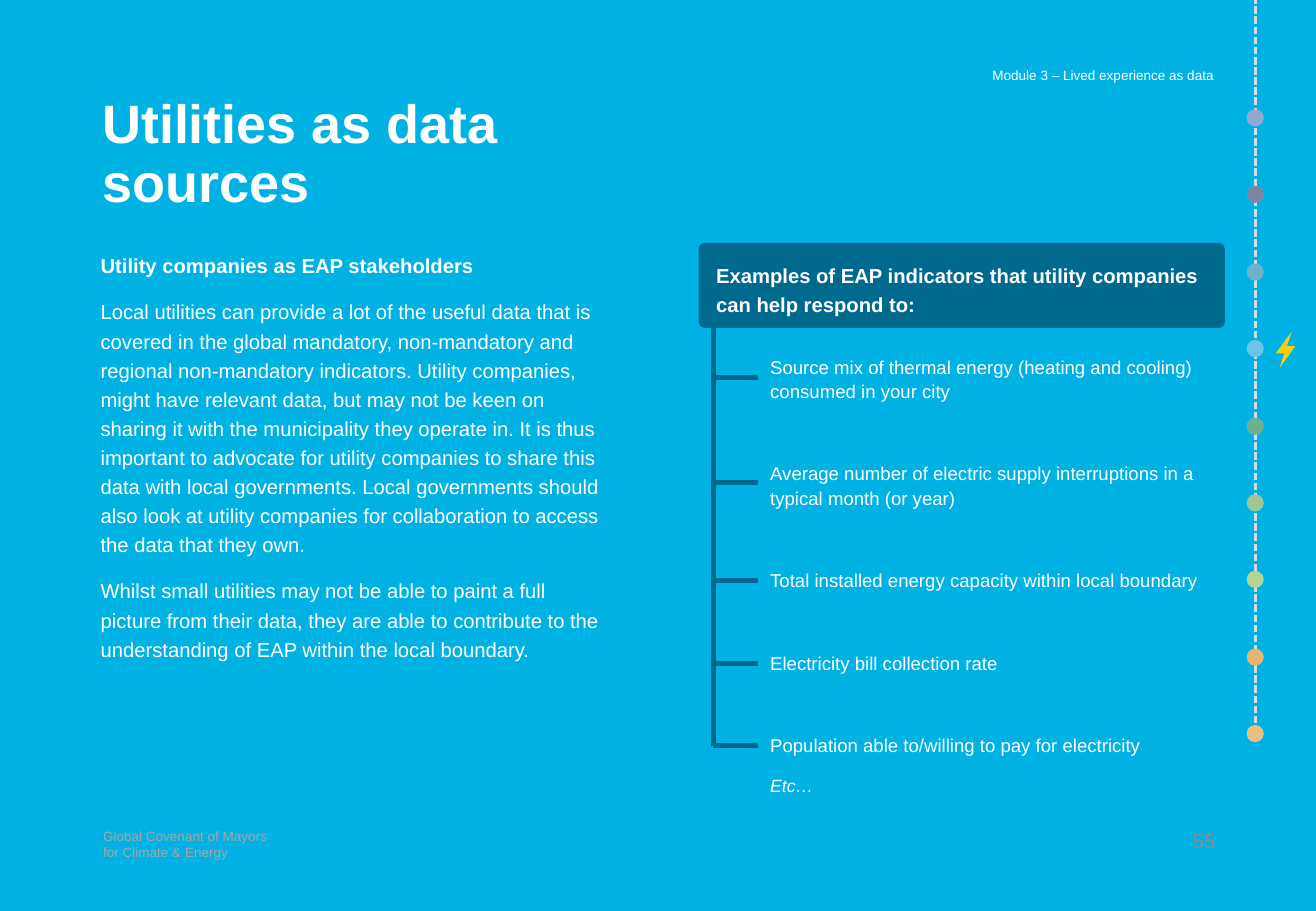
import pptx
import pptx.dml.color
import pptx.enum.dml
import pptx.enum.shapes
import pptx.enum.text
import pptx.oxml.ns
import pptx.util
from lxml import etree

SCALE = 9144  # EMU in one px, 100 px to the inch
SHAPE = pptx.enum.shapes.MSO_SHAPE
ALIGN = pptx.enum.text.PP_ALIGN
ANCHOR = pptx.enum.text.MSO_ANCHOR

SKY, NAVY, WHITE = "00B2E3", "00698E", "FFFFFF"
PALE, GREY, DIM, GOLD = "D9D9D9", "A6A6A6", "8C8C8C", "FAD307"

INTRO = [
    "Local utilities can provide a lot of the useful data that is covered in the global "
    "mandatory, non-mandatory and regional non-mandatory indicators. Utility companies, "
    "might have relevant data, but may not be keen on sharing it with the municipality "
    "they operate in. It is thus important to advocate for utility companies to share "
    "this data with local governments. Local governments should also look at utility "
    "companies for collaboration to access the data that they own.",
    "Whilst small utilities may not be able to paint a full picture from their data, "
    "they are able to contribute to the understanding of EAP within the local boundary.",
]
# Indicator text and the height of its branch
INDICATORS = [
    ("Source mix of thermal energy (heating and cooling) consumed in your city", 311),
    ("Average number of electric supply interruptions in a typical month (or year)", 397),
    ("Total installed energy capacity within local boundary", 478),
    ("Electricity bill collection rate", 546),
    ("Population able to/willing to pay for electricity", 614),
]
STOPS = ["4C78CE", "1C3567", "008CBE", "00B0F0", "038842",
         "6AB24D", "92D050", "F19500", "F8A92A"]


def px(n):
    return pptx.util.Emu(round(n * SCALE))


def rgb(code):
    return pptx.dml.color.RGBColor.from_string(code)


def sub(node, tag, **attrs):
    return etree.SubElement(node, pptx.oxml.ns.qn(tag), **attrs)


def para(text, size=12, color=WHITE, bold=False, slant=False, gap=10):
    """Describe one paragraph; gap is the space before it in points."""
    return dict(text=text, size=size, color=color, bold=bold, slant=slant, gap=gap)


class Page:
    def __init__(self, deck, font, back):
        self.font = font
        self.slide = deck.slides.add_slide(deck.slide_layouts[5])
        self.shapes = self.slide.shapes
        fill = self.slide.background.fill
        fill.solid()
        fill.fore_color.rgb = rgb(back)

    def fill_text(self, frame, paras, lead=1.0, align=ALIGN.LEFT, anchor=ANCHOR.TOP):
        frame.word_wrap = True
        frame.auto_size = pptx.enum.text.MSO_AUTO_SIZE.NONE
        frame.vertical_anchor = anchor
        for i, item in enumerate(paras):
            p = frame.add_paragraph() if i else frame.paragraphs[0]
            p.alignment = align
            p.line_spacing = lead
            p.space_before = pptx.util.Pt(item["gap"] if i else 0)
            for j, line in enumerate(item["text"].split("\n")):
                if j:
                    p.add_line_break()
                run = p.add_run()
                run.text = line
                run.font.name = self.font
                run.font.size = pptx.util.Pt(item["size"])
                run.font.bold = item["bold"]
                run.font.italic = item["slant"]
                run.font.color.rgb = rgb(item["color"])

    def title(self, box, text):
        holder = self.shapes.title
        holder.left, holder.top, holder.width, holder.height = map(px, box)
        self.fill_text(holder.text_frame, [para(text, 32, bold=True)], 0.9)

    def text(self, box, paras, **style):
        frame = self.shapes.add_textbox(*map(px, box)).text_frame
        self.fill_text(frame, paras, **style)

    def paint(self, shape, color, alpha=100):
        shape.shadow.inherit = False
        shape.fill.solid()
        shape.fill.fore_color.rgb = rgb(color)
        shape.line.fill.background()
        if alpha < 100:
            solid = shape._element.spPr.find(pptx.oxml.ns.qn("a:solidFill"))
            sub(solid[0], "a:alpha", val=str(alpha * 1000))

    def panel(self, box, paras, pads, **style):
        """Draw a rounded box with text; pads run left, top, right, bottom."""
        shape = self.shapes.add_shape(SHAPE.ROUNDED_RECTANGLE, *map(px, box))
        shape.adjustments[0] = 0.07
        self.paint(shape, NAVY)
        frame = shape.text_frame
        (frame.margin_left, frame.margin_top,
         frame.margin_right, frame.margin_bottom) = map(px, pads)
        self.fill_text(frame, paras, **style)

    def dot(self, x, y, size, color, alpha=100):
        shape = self.shapes.add_shape(SHAPE.OVAL, px(x), px(y), px(size), px(size))
        self.paint(shape, color, alpha)

    def line(self, start, end, color, width, dash=None):
        kind = pptx.enum.shapes.MSO_CONNECTOR.STRAIGHT
        line = self.shapes.add_connector(kind, *map(px, start + end))
        line.line.color.rgb = rgb(color)
        line.line.width = pptx.util.Pt(width)
        if dash:
            line.line.dash_style = dash
        sub(line._element.spPr, "a:effectLst")

    def outline(self, points, color):
        pen = self.shapes.build_freeform(*points[0], scale=SCALE)
        pen.add_line_segments(points[1:], close=True)
        self.paint(pen.convert_to_shape(), color)


def main():
    deck = pptx.Presentation()
    deck.slide_width, deck.slide_height = px(1083), px(750)
    page = Page(deck, "Arial", SKY)

    page.title((74, 75, 501, 108), "Utilities as data sources")
    page.text((667, 50, 342, 24), [para("Module 3 – Lived experience as data", 8)],
              lead=0.9, align=ALIGN.RIGHT, anchor=ANCHOR.BOTTOM)
    page.text((75, 677, 183, 40),
              [para("Global Covenant of Mayors\nfor Climate & Energy", 8, GREY)])
    page.text((958, 677, 52, 40), [para("55", 12, DIM)], align=ALIGN.RIGHT)

    head = para("Utility companies as EAP stakeholders", bold=True)
    page.text((73, 200, 433, 476), [head] + [para(t) for t in INTRO], lead=1.2)

    # Indicator tree
    trunk, tip = 587, 624
    page.line((trunk, 270), (trunk, INDICATORS[-1][1]), NAVY, 3)
    for _, y in INDICATORS:
        page.line((tip, y), (trunk, y), NAVY, 3)
    ask = "Examples of EAP indicators that utility companies can help respond to:"
    page.panel((575, 200, 433, 70), [para(ask, bold=True)], (13, 11, 7, 5), lead=1.2)
    items = [para(t, 11, gap=34.3) for t, _ in INDICATORS]
    page.text((tip, 286, 410, 390), items + [para("Etc…", 10.5, slant=True)], lead=1.1)

    # Progress track
    page.line((1033, 604), (1033, 0), PALE, 1.5,
              pptx.enum.dml.MSO_LINE.SQUARE_DOT)
    for i, color in enumerate(STOPS):
        y = round(90 + i * 63.4)
        page.dot(1026, y, 14, PALE)
        page.dot(1026, y, 14, color, 50)

    # Lightning bolt: one half, then the same half turned about the centre
    half = [(1057, 291), (1050, 291), (1063, 273), (1058, 288)]
    page.outline(half, GOLD)
    page.outline([(2116 - x, 576 - y) for x, y in half], GOLD)

    deck.save("out.pptx")


if __name__ == "__main__":
    main()
